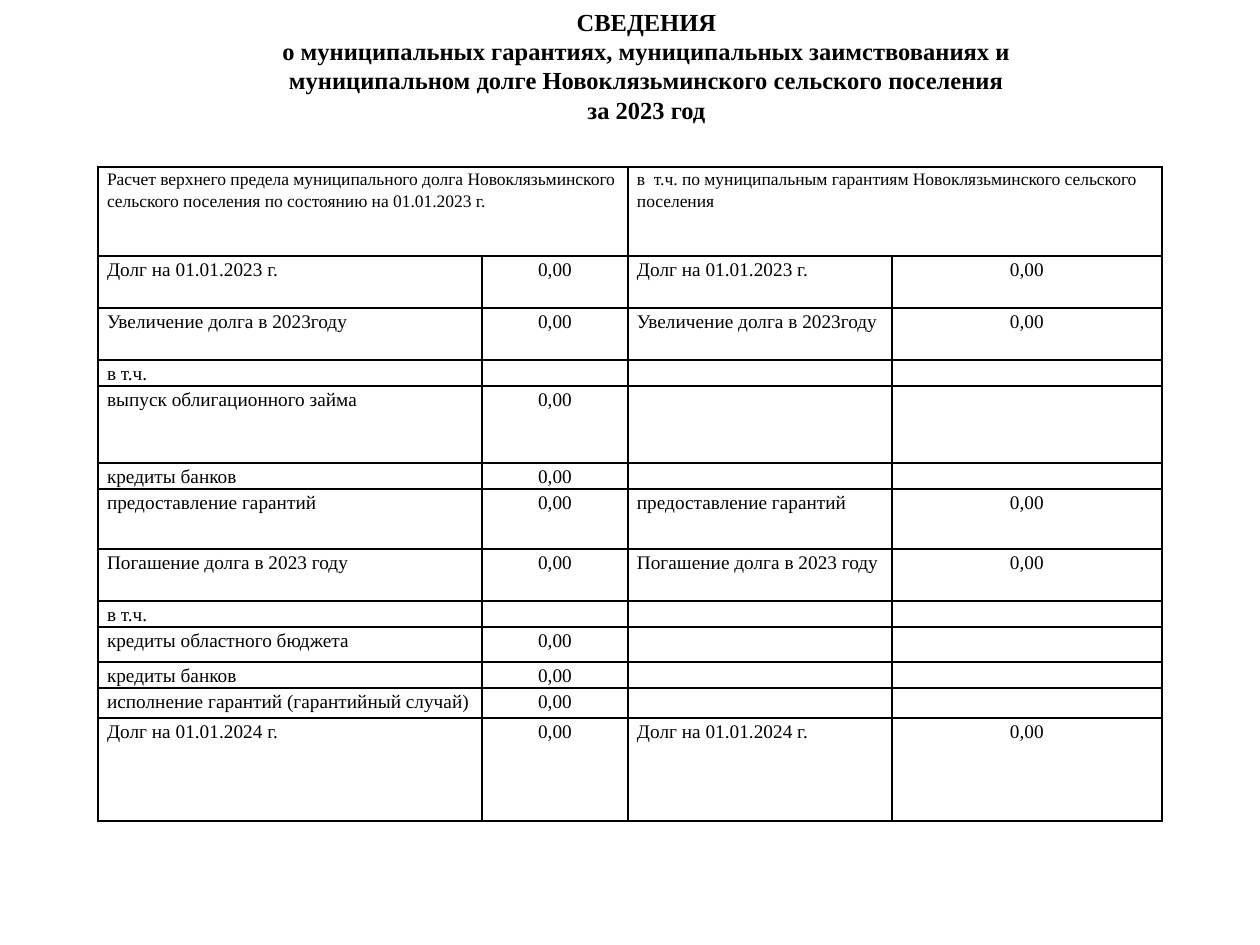
from dataclasses import dataclass

from lxml.etree import SubElement
from pptx import Presentation
from pptx.dml.color import RGBColor
from pptx.enum.text import MSO_ANCHOR, MSO_AUTO_SIZE, PP_ALIGN
from pptx.oxml.ns import qn
from pptx.util import Emu, Pt

EMU_PER_PIXEL = 914400 / 126


def px(length):
    return Emu(round(length * EMU_PER_PIXEL))


def set_attributes(target, values):
    for name, value in values.items():
        setattr(target, name, value)


@dataclass(frozen=True)
class Theme:
    font: str = "Times New Roman"
    ink: str = "000000"
    title_size: int = 14
    header_size: int = 10
    body_size: int = 11
    border_width: int = 1


THEME = Theme()
TITLE_LINES = [
    "СВЕДЕНИЯ",
    "о муниципальных гарантиях, муниципальных заимствованиях и",
    "муниципальном долге Новоклязьминского сельского поселения",
    "за 2023 год",
]
HEADER_HEIGHT = 89
HEADERS = [
    "Расчет верхнего предела муниципального долга Новоклязьминского "
    "сельского поселения по состоянию на 01.01.2023 г.",
    "в  т.ч. по муниципальным гарантиям Новоклязьминского сельского поселения",
]
COLUMN_WIDTHS = [384, 146, 264, 270]
ZERO = "0,00"
# Row height, label, debt amount, whether the guarantees half repeats both
DEBT_ROWS = [
    (52, "Долг на 01.01.2023 г.", ZERO, True),
    (52, "Увеличение долга в 2023году", ZERO, True),
    (26, "в т.ч.", "", False),
    (77, "выпуск облигационного займа", ZERO, False),
    (26, "кредиты банков", ZERO, False),
    (60, "предоставление гарантий", ZERO, True),
    (52, "Погашение долга в 2023 году", ZERO, True),
    (26, "в т.ч.", "", False),
    (35, "кредиты областного бюджета", ZERO, False),
    (26, "кредиты банков", ZERO, False),
    (30, "исполнение гарантий (гарантийный случай)", ZERO, False),
    (103, "Долг на 01.01.2024 г.", ZERO, True),
]


class SlideBuilder:
    def __init__(self, slide, theme):
        self.slide = slide
        self.theme = theme

    def add_text(self, paragraph, text, size, bold=False):
        run = paragraph.add_run()
        run.text = text
        set_attributes(run.font, {"name": self.theme.font, "size": Pt(size), "bold": bold})
        run.font.color.rgb = RGBColor.from_string(self.theme.ink)

    def add_title(self, lines, left, top, width, height, first_line_indent):
        title = self.slide.shapes.title
        set_attributes(title, {"left": px(left), "top": px(top),
                               "width": px(width), "height": px(height)})
        frame = title.text_frame
        set_attributes(frame, {"word_wrap": True, "auto_size": MSO_AUTO_SIZE.NONE,
                               "vertical_anchor": MSO_ANCHOR.MIDDLE})
        for index, line in enumerate(lines):
            paragraph = frame.add_paragraph() if index else frame.paragraphs[0]
            paragraph.alignment = PP_ALIGN.CENTER
            properties = paragraph._p.get_or_add_pPr()
            properties.set("marL", "0")
            properties.set("indent", str(px(first_line_indent)))
            self.add_text(paragraph, line, self.theme.title_size, bold=True)

    def add_borders(self, cell):
        properties = cell._tc.get_or_add_tcPr()
        for side in ("a:lnL", "a:lnR", "a:lnT", "a:lnB"):
            line = SubElement(properties, qn(side), w=str(Pt(self.theme.border_width)))
            fill = SubElement(line, qn("a:solidFill"))
            SubElement(fill, qn("a:srgbClr"), val=self.theme.ink)

    def format_cell(self, cell, text, size, alignment):
        set_attributes(cell, {"margin_left": px(9), "margin_right": px(9),
                              "margin_top": 0, "margin_bottom": 0})
        self.add_borders(cell)
        cell.fill.background()
        paragraph = cell.text_frame.paragraphs[0]
        set_attributes(paragraph, {"alignment": alignment, "line_spacing": 1.15,
                                   "space_after": Pt(10)})
        if text:
            self.add_text(paragraph, text, size)
        else:
            # An empty cell needs its own type size to keep the row low
            SubElement(paragraph._p, qn("a:endParaRPr"), sz=str(size * 100))

    def add_debt_table(self, left, top):
        heights = [HEADER_HEIGHT] + [row[0] for row in DEBT_ROWS]
        table = self.slide.shapes.add_table(
            len(heights), len(COLUMN_WIDTHS), px(left), px(top),
            px(sum(COLUMN_WIDTHS)), px(sum(heights))).table
        set_attributes(table, {"first_row": False, "horz_banding": False})
        for column, width in zip(table.columns, COLUMN_WIDTHS):
            column.width = px(width)
        for row, height in zip(table.rows, heights):
            row.height = px(height)

        for half, header in enumerate(HEADERS):
            first, second = table.cell(0, 2 * half), table.cell(0, 2 * half + 1)
            first.merge(second)
            self.format_cell(first, header, self.theme.header_size, PP_ALIGN.LEFT)
            self.format_cell(second, "", self.theme.header_size, PP_ALIGN.LEFT)

        for row_index, (_, label, amount, repeated) in enumerate(DEBT_ROWS, start=1):
            is_last = row_index == len(DEBT_ROWS)
            label_alignment = PP_ALIGN.JUSTIFY if is_last else PP_ALIGN.LEFT
            guarantees = [label, amount] if repeated else ["", ""]
            for column_index, text in enumerate([label, amount] + guarantees):
                alignment = PP_ALIGN.CENTER if column_index % 2 else label_alignment
                self.format_cell(table.cell(row_index, column_index), text,
                                 self.theme.body_size, alignment)


def main():
    presentation = Presentation()
    set_attributes(presentation, {"slide_width": px(1260), "slide_height": px(945)})
    title_only = presentation.slide_layouts.get_by_name("Title Only")
    builder = SlideBuilder(presentation.slides.add_slide(title_only), THEME)
    builder.add_title(TITLE_LINES, 0, 0, 1231, 131, first_line_indent=62)
    builder.add_debt_table(98, 167)
    presentation.save("out.pptx")


if __name__ == "__main__":
    main()
